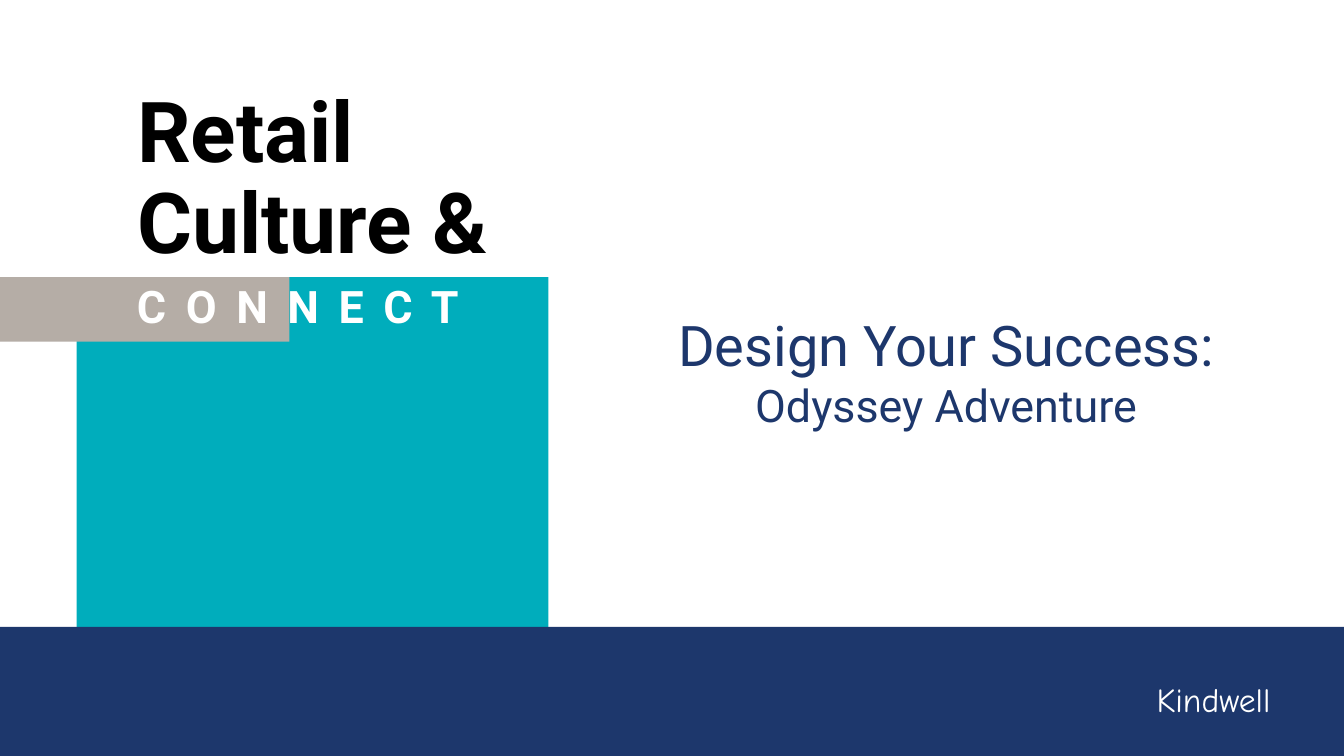
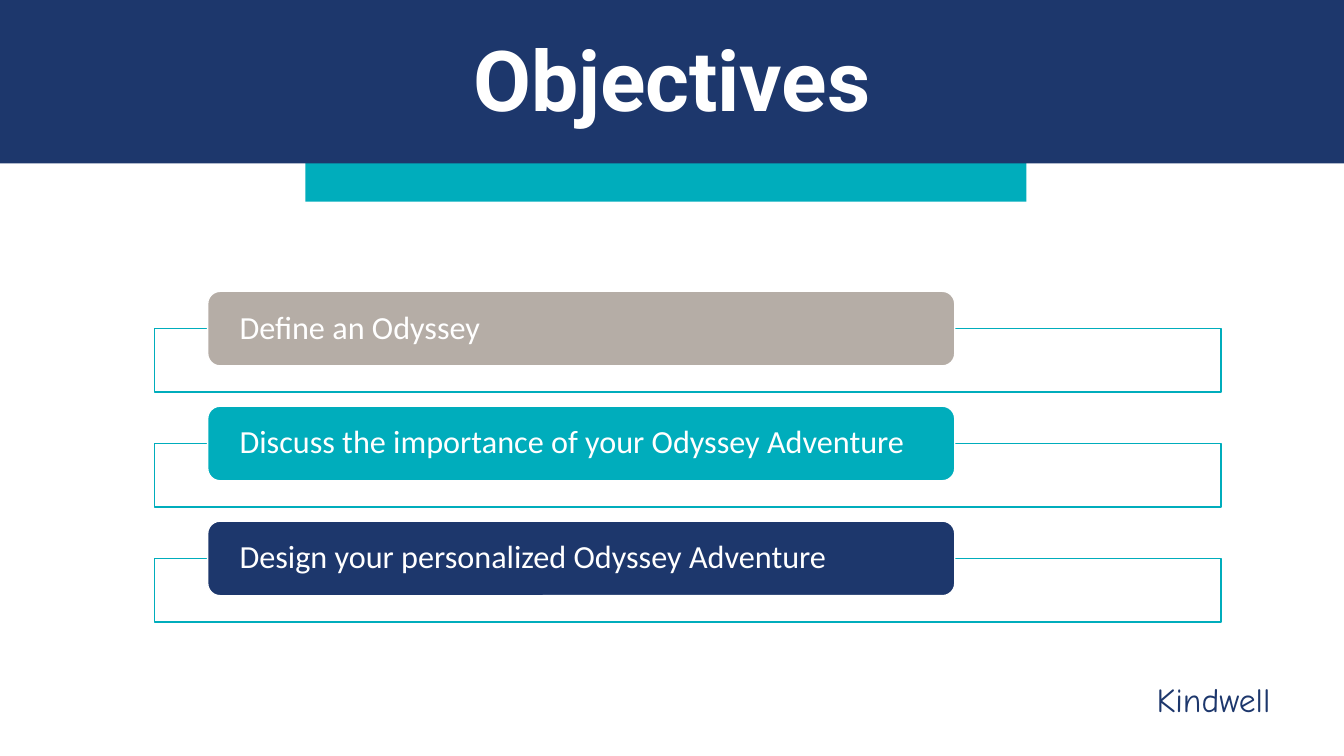
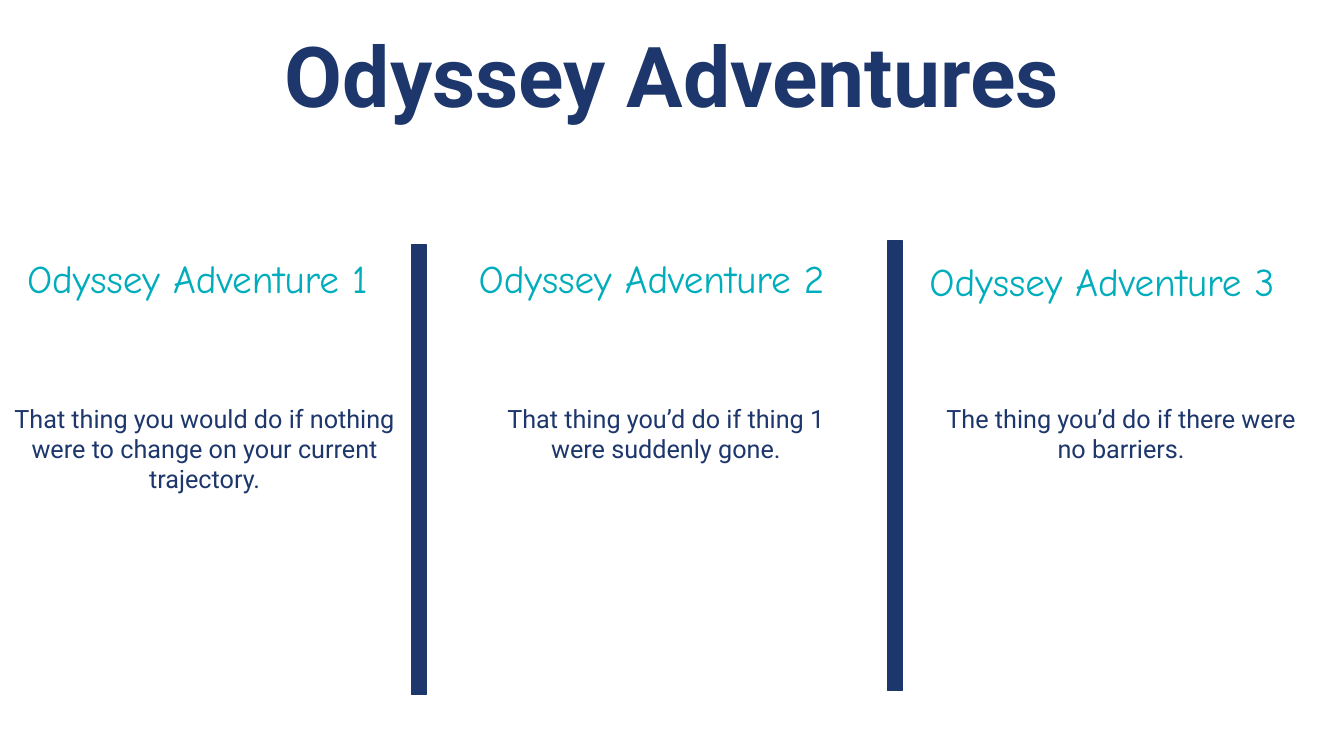
from pptx import Presentation
from pptx.dml.color import RGBColor
from pptx.enum import shapes, text
from pptx.util import Inches, Pt

NAVY = "1D376C"
TEAL = "00ADBC"
TAUPE = "B5ADA6"
WHITE = "FFFFFF"
BLACK = "000000"
HEADING_FONT = "Roboto"
ACCENT_FONT = "Comic Neue"
LIST_FONT = "Calibri"
SLIDE_WIDTH, SLIDE_HEIGHT = 13.33, 7.5
LEFT, CENTER = text.PP_ALIGN.LEFT, text.PP_ALIGN.CENTER


def color(hex_string):
    return RGBColor.from_string(hex_string)


def format_paragraph(paragraph, size, font, hex_color, align=LEFT, bold=False):
    paragraph.alignment = align
    for run in paragraph.runs:
        run.font.size = Pt(size)
        run.font.name = font
        run.font.bold = bold
        run.font.color.rgb = color(hex_color)


def add_block(slide, left, top, width, height, fill, line=None,
              kind=shapes.MSO_SHAPE.RECTANGLE):
    shape = slide.shapes.add_shape(
        kind, Inches(left), Inches(top), Inches(width), Inches(height))
    shape.shadow.inherit = False
    shape.fill.solid()
    shape.fill.fore_color.rgb = color(fill)
    if line:
        shape.line.color.rgb = color(line)
        shape.line.width = Pt(1)
    else:
        shape.line.fill.background()
    return shape


def add_text(slide, left, top, width, height, content, size, font, hex_color, align=LEFT):
    box = slide.shapes.add_textbox(
        Inches(left), Inches(top), Inches(width), Inches(height))
    frame = box.text_frame
    frame.word_wrap = True
    frame.text = content
    for paragraph in frame.paragraphs:
        format_paragraph(paragraph, size, font, hex_color, align)
    return frame


def set_title(slide, content, left, top, height, hex_color, align=CENTER):
    """Place the title in front of everything drawn so far."""
    title = slide.shapes.title
    title.left, title.top = Inches(left), Inches(top)
    title.width, title.height = Inches(SLIDE_WIDTH - left), Inches(height)
    title.element.getparent().append(title.element)
    frame = title.text_frame
    frame.text = content
    frame.auto_size = text.MSO_AUTO_SIZE.NONE
    frame.vertical_anchor = text.MSO_ANCHOR.TOP
    for paragraph in frame.paragraphs:
        format_paragraph(paragraph, 60, HEADING_FONT, hex_color, align, bold=True)
        paragraph.line_spacing = Pt(65)


def add_wordmark(slide, hex_color):
    add_text(slide, 10.94, 6.69, 2.19, 0.5, "Kindwell", 24, ACCENT_FONT, hex_color, CENTER)


def add_objective(slide, top, content, fill):
    """Draw a labelled pill over the top edge of an outlined frame."""
    add_block(slide, 1.53, top + 0.37, 10.58, 0.63, WHITE, TEAL)
    pill = add_block(slide, 2.06, top, 7.41, 0.74, fill, WHITE,
                     shapes.MSO_SHAPE.ROUNDED_RECTANGLE)
    frame = pill.text_frame
    frame.text = content
    frame.word_wrap = True
    frame.vertical_anchor = text.MSO_ANCHOR.MIDDLE
    frame.margin_left = frame.margin_right = Inches(0.28)
    frame.margin_top = frame.margin_bottom = 0
    paragraph = frame.paragraphs[0]
    paragraph.line_spacing = 0.9
    format_paragraph(paragraph, 23, LIST_FONT, WHITE)


def build_cover(slide):
    add_block(slide, 0.76, 2.75, 4.68, 3.5, TEAL)
    add_block(slide, 0, 2.75, 2.87, 0.64, TAUPE)
    add_block(slide, 0, 6.22, SLIDE_WIDTH, SLIDE_HEIGHT - 6.22, NAVY)
    set_title(slide, "Retail\nCulture &", 1.26, 0.83, 1.95, BLACK, LEFT)

    connect = add_text(slide, 1.26, 2.72, 11.97, 0.64, "C O N N E C T",
                       32, HEADING_FONT, WHITE)
    for run in connect.paragraphs[0].runs:
        run.font.bold = True
        run.font._element.set("spc", "300")

    add_wordmark(slide, WHITE)
    subtitle = add_text(slide, 5.44, 3.03, 7.89, 1.31,
                        "Design Your Success:\nOdyssey Adventure",
                        40, HEADING_FONT, NAVY, CENTER)
    subtitle.paragraphs[1].runs[0].font.size = Pt(32)


def build_objectives(slide):
    add_block(slide, 3.03, 1.38, 7.15, 0.62, TEAL)
    add_block(slide, 0, 0, SLIDE_WIDTH, 1.62, NAVY)
    set_title(slide, "Objectives", 0, 0.32, 1.03, WHITE)
    add_wordmark(slide, NAVY)
    objectives = [
        ("Define an Odyssey", TAUPE),
        ("Discuss the importance of your Odyssey Adventure", TEAL),
        ("Design your personalized Odyssey Adventure", NAVY),
    ]
    for index, (content, fill) in enumerate(objectives):
        add_objective(slide, 2.89 + index * 1.14, content, fill)


def build_adventures(slide):
    set_title(slide, "Odyssey Adventures", 0, 0.28, 1.04, NAVY)
    for left, top in [(4.08, 2.43), (8.8, 2.39)]:
        add_block(slide, left, top, 0.15, 4.46, NAVY, NAVY)
    adventures = [
        (0.17, 2.47, 0, 4.06,
         "That thing you would do if nothing were to change on your current trajectory."),
        (4.65, 2.47, 4.73, 3.75, "That thing you’d do if thing 1 were suddenly gone."),
        (9.12, 2.5, 9.27, 3.7, "The thing you’d do if there were no barriers."),
    ]
    for number, (left, top, body_left, body_width, content) in enumerate(adventures, 1):
        add_text(slide, left, top, 4.2, 0.57, f"Odyssey Adventure {number}",
                 28, ACCENT_FONT, TEAL)
        add_text(slide, body_left, 3.95, body_width, 1.01, content,
                 18, HEADING_FONT, NAVY, CENTER)


def main():
    presentation = Presentation()
    presentation.slide_width = Inches(SLIDE_WIDTH)
    presentation.slide_height = Inches(SLIDE_HEIGHT)
    title_only = presentation.slide_layouts.get_by_name("Title Only")
    for build in (build_cover, build_objectives, build_adventures):
        build(presentation.slides.add_slide(title_only))
    presentation.save("out.pptx")


if __name__ == "__main__":
    main()
